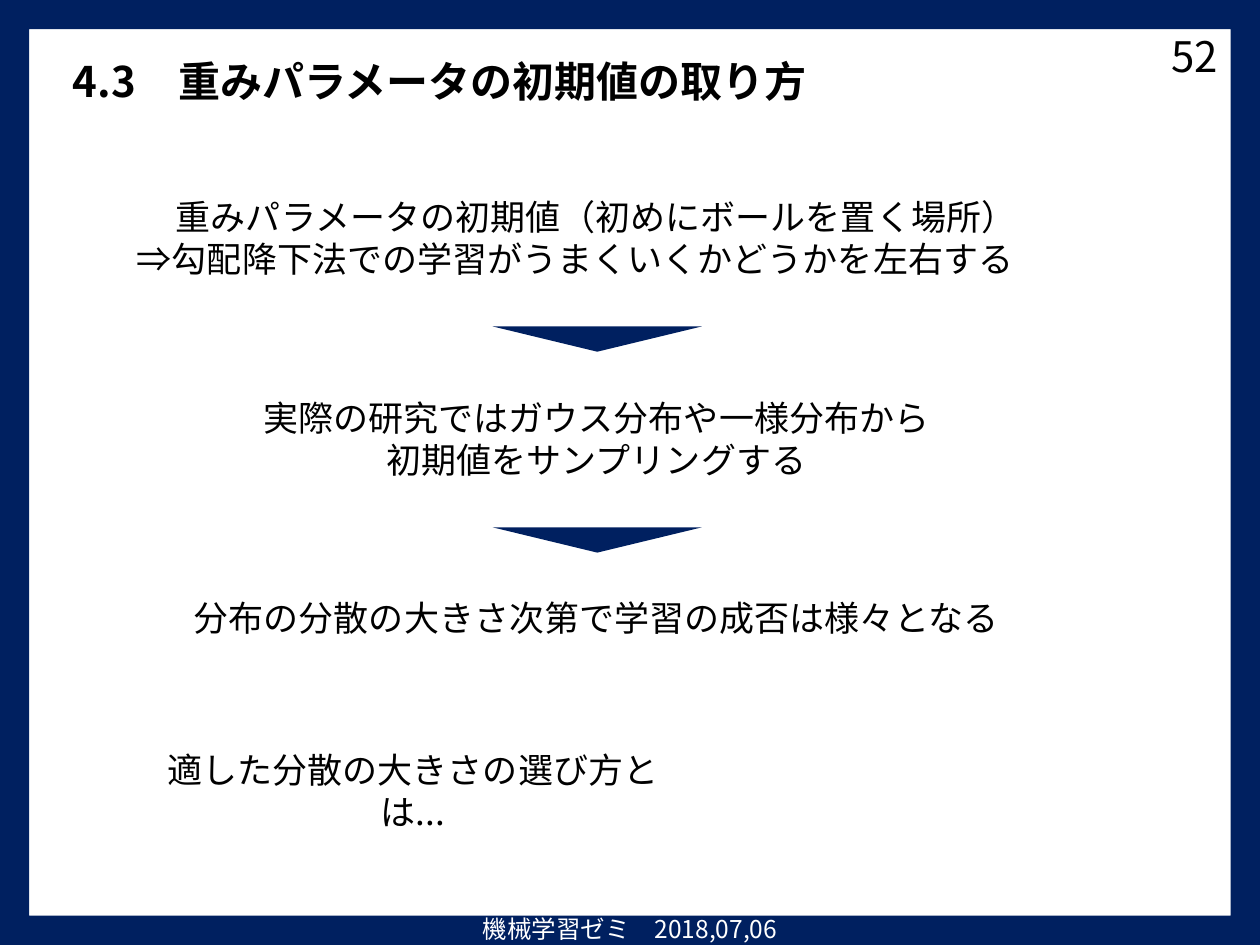
import pptx
import pptx.util
import pptx.dml.color
import pptx.enum.shapes
import pptx.enum.text
from dataclasses import dataclass
from lxml import etree

Cm = pptx.util.Cm
RGB = pptx.dml.color.RGBColor
ALIGN = pptx.enum.text.PP_ALIGN
ANCHOR = pptx.enum.text.MSO_ANCHOR
SHAPE = pptx.enum.shapes.MSO_SHAPE


@dataclass(frozen=True)
class Theme:
    navy: RGB = RGB.from_string("002060")
    black: RGB = RGB.from_string("000000")
    white: RGB = RGB.from_string("FFFFFF")
    font: str = "Noto Sans CJK JP"
    title: int = 24
    body: int = 20
    footer: int = 14


theme = Theme()
prs = pptx.Presentation()
prs.slide_width, prs.slide_height = Cm(25.4), Cm(19.05)
s = prs.slides.add_slide(prs.slide_layouts[6])


def add_text(text, *, left, top, width, height, size=theme.body, color=theme.black,
             bold=False, aligns=(ALIGN.CENTER,), anchor=ANCHOR.TOP, wrap=False):
    tf = s.shapes.add_textbox(Cm(left), Cm(top), Cm(width), Cm(height)).text_frame
    tf.word_wrap = wrap
    tf.vertical_anchor = anchor
    for i, line in enumerate(text.split("\n")):
        p = tf.paragraphs[0] if i == 0 else tf.add_paragraph()
        p.alignment = aligns[min(i, len(aligns) - 1)]
        r = p.add_run()
        r.text = line
        r.font.size = pptx.util.Pt(size)
        r.font.bold = bold
        r.font.color.rgb = color
        r.font.name = theme.font
        latin = r.font._element.find(pptx.oxml.ns.qn("a:latin"))
        ea = etree.Element(pptx.oxml.ns.qn("a:ea"), typeface=theme.font)
        latin.addnext(ea)


def add_navy_shape(kind, left, top, width, height):
    sp = s.shapes.add_shape(kind, Cm(left), Cm(top), Cm(width), Cm(height))
    sp.shadow.inherit = False
    sp.fill.solid()
    sp.fill.fore_color.rgb = theme.navy
    sp.line.fill.background()
    return sp


frame = add_navy_shape(SHAPE.FRAME, 0, 0, 25.4, 19.05)
frame.adjustments[0] = 0.031
add_text("機械学習ゼミ　2018,07,06", left=0, top=18.31, width=25.4, height=0.86,
         size=theme.footer, color=theme.white, wrap=True)
add_text("52", left=19.08, top=0.61, width=5.72, height=1.02, size=theme.title,
         aligns=(ALIGN.RIGHT,), anchor=ANCHOR.MIDDLE, wrap=True)
add_text("4.3　重みパラメータの初期値の取り方", left=1.22, top=0.99, width=15.72,
         height=1.27, size=theme.title, bold=True, aligns=(ALIGN.LEFT,))

steps = [
    ("重みパラメータの初期値（初めにボールを置く場所）\n⇒勾配降下法での学習がうまくいくかどうかを左右する",
     2.51, 19.02, 1.96, (ALIGN.CENTER, ALIGN.LEFT)),
    ("実際の研究ではガウス分布や一様分布から\n初期値をサンプリングする",
     5.0, 14.05, 1.96, (ALIGN.CENTER,)),
    ("分布の分散の大きさ次第で学習の成否は様々となる",
     3.58, 16.89, 1.12, (ALIGN.CENTER,)),
]
step_top, step_pitch, arrow_offset = 3.81, 4.05, 2.77
for i, (text, left, width, height, aligns) in enumerate(steps):
    top = step_top + i * step_pitch
    add_text(text, left=left, top=top, width=width, height=height, aligns=aligns)
    if i < len(steps) - 1:
        arrow = add_navy_shape(SHAPE.ISOSCELES_TRIANGLE, 9.93, top + arrow_offset, 4.22, 0.51)
        arrow.rotation = 180

add_text("適した分散の大きさの選び方とは...", left=2.51, top=14.96, width=11.63,
         height=1.12, wrap=True)

prs.save("out.pptx")
